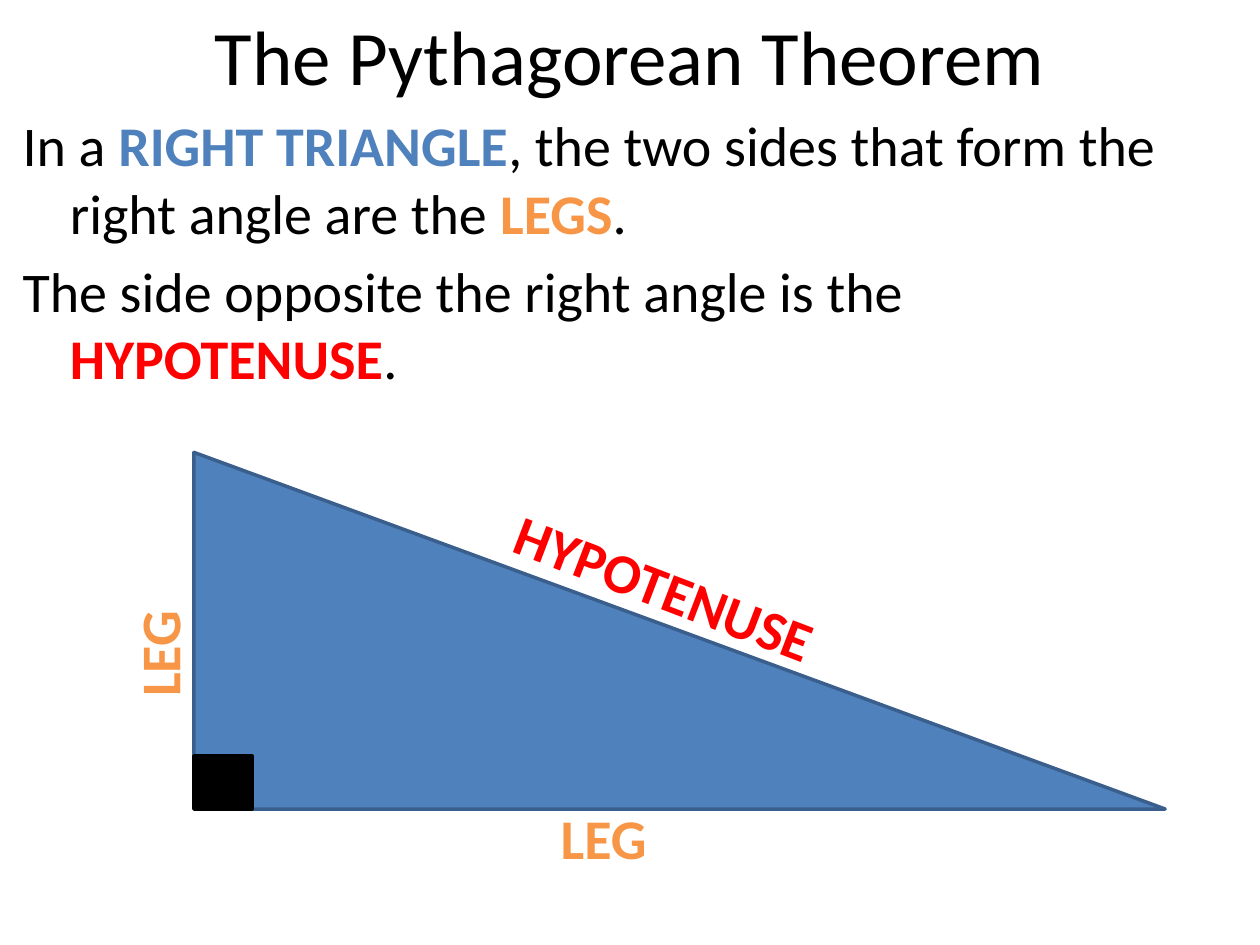
import lxml.etree
import pptx
import pptx.dml.color
import pptx.enum.shapes
import pptx.enum.text
import pptx.oxml.ns
import pptx.util

Cm = pptx.util.Cm
Pt = pptx.util.Pt
FONT = "Calibri"
BLACK, BLUE, ORANGE, RED = "000000", "4F81BD", "F79646", "FF0000"
OUTLINE = "3A5F8C"

DEFINITIONS = [
    [("In a ", BLACK), ("RIGHT TRIANGLE", BLUE),
     (", the two sides that form the right angle are the ", BLACK),
     ("LEGS", ORANGE), (".", BLACK)],
    [("The side opposite the right angle is the ", BLACK),
     ("HYPOTENUSE", RED), (".", BLACK)],
]


def color(hex_string):
    """Return the RGB colour for a hex string."""
    return pptx.dml.color.RGBColor.from_string(hex_string)


def place(part, left, top, width, height):
    """Move and size a part, in centimetres."""
    part.left, part.top = Cm(left), Cm(top)
    part.width, part.height = Cm(width), Cm(height)


def style_font(font, size, hex_string):
    """Set typeface, size and colour."""
    font.name, font.size = FONT, Pt(size)
    font.color.rgb = color(hex_string)


def fill_title(title, box):
    """Place the centred heading in the box."""
    place(title, *box)
    title.text_frame.vertical_anchor = pptx.enum.text.MSO_ANCHOR.MIDDLE
    heading = title.text_frame.paragraphs[0]
    heading.text = "The Pythagorean Theorem"
    heading.alignment = pptx.enum.text.PP_ALIGN.CENTER
    style_font(heading.font, 44, BLACK)


def fill_definitions(body, box):
    """Write the unbulleted definitions with highlighted terms."""
    place(body, *box)
    frame = body.text_frame
    for index, definition in enumerate(DEFINITIONS):
        paragraph = frame.add_paragraph() if index else frame.paragraphs[0]
        properties = paragraph._p.get_or_add_pPr()
        lxml.etree.SubElement(properties, pptx.oxml.ns.qn("a:buNone"))
        for words, hue in definition:
            run = paragraph.add_run()
            run.text = words
            style_font(run.font, 32, hue)
            run.font.bold = hue != BLACK


def add_solid(shapes, preset, box, fill, line):
    """Add a filled, outlined preset shape."""
    solid = shapes.add_shape(preset, *map(Cm, box))
    solid.shadow.inherit = False
    solid.fill.solid()
    solid.fill.fore_color.rgb = color(fill)
    solid.line.color.rgb = color(line)
    solid.line.width = Pt(2)


def add_side_label(slide, words, hue, center, width, rotation=0):
    """Add a bold side name centred on a point and turned."""
    height = 1.63
    x, y = center
    label = slide.shapes.add_textbox(
        Cm(x - width / 2), Cm(y - height / 2), Cm(width), Cm(height))
    label.rotation = rotation
    frame = label.text_frame
    frame.word_wrap = True
    frame.auto_size = pptx.enum.text.MSO_AUTO_SIZE.SHAPE_TO_FIT_TEXT
    name = frame.paragraphs[0]
    name.text = words
    name.alignment = pptx.enum.text.PP_ALIGN.CENTER
    style_font(name.font, 32, hue)
    name.font.bold = True


def add_triangle_diagram(slide, box):
    """Draw the right triangle in the box and name its sides."""
    left, top, width, height = box
    corner_width, corner_height = 1.17, 1.07
    corner_box = (left, top + height - corner_height, corner_width, corner_height)
    presets = pptx.enum.shapes.MSO_SHAPE
    triangle = slide.shapes.add_group_shape()
    add_solid(triangle.shapes, presets.RIGHT_TRIANGLE, box, BLUE, OUTLINE)
    add_solid(triangle.shapes, presets.RECTANGLE, corner_box, BLACK, BLACK)
    add_side_label(slide, "HYPOTENUSE", RED, (left + 9.49, top + 2.72), 8.56, 20.9)
    add_side_label(slide, "LEG", ORANGE, (left - 0.71, top + 4.06), 4.11, 270)
    add_side_label(slide, "LEG", ORANGE, (left + 8.26, top + height + 0.58), 4.88)


def main():
    """Build and save the slide."""
    deck = pptx.Presentation()
    deck.slide_width, deck.slide_height = Cm(25.4), Cm(19.05)
    slide = deck.slides.add_slide(deck.slide_layouts[1])
    fill_title(slide.shapes.title, (1.27, 0, 22.86, 2.21))
    fill_definitions(slide.placeholders[1], (0.2, 2.11, 24.97, 6.55))
    add_triangle_diagram(slide, (3.91, 9.12, 19.58, 7.19))
    deck.save("out.pptx")


if __name__ == "__main__":
    main()
